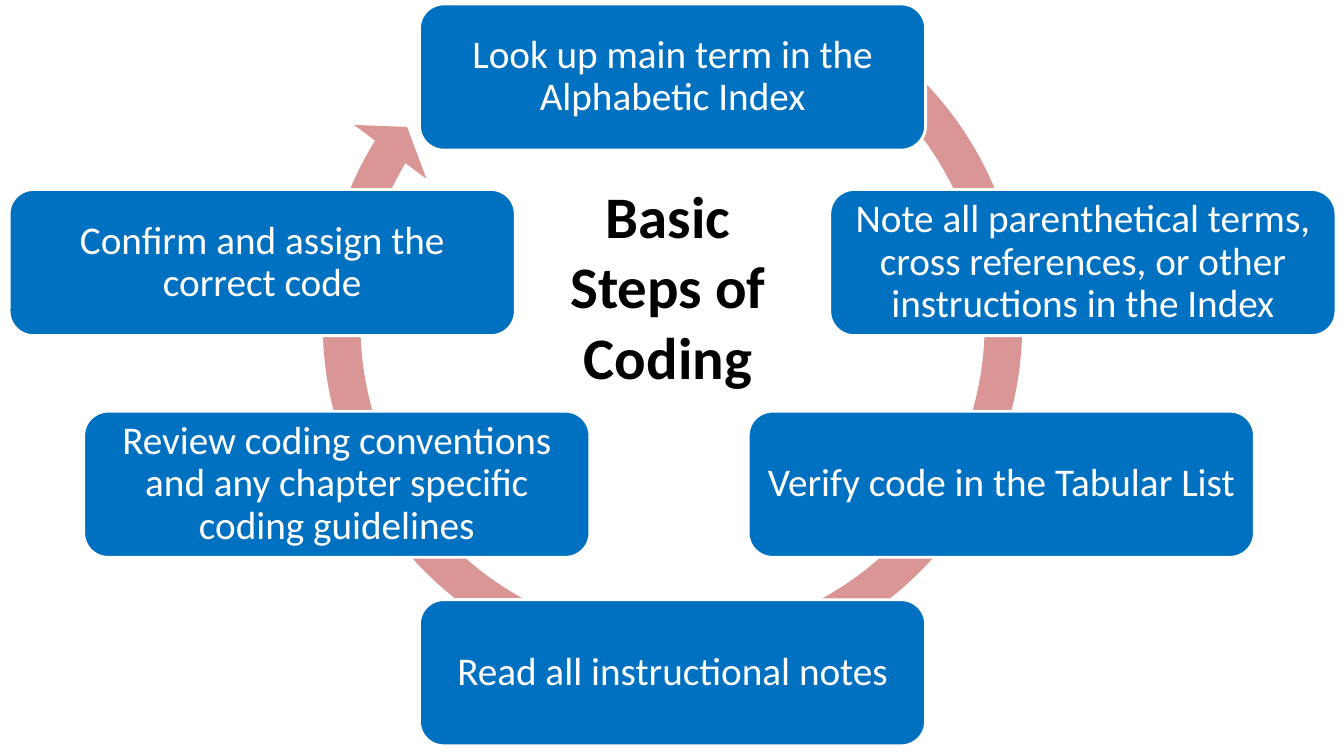
"""Build a slide showing the basic steps of coding as a cycle."""
from pptx import Presentation
from pptx import util as u
from pptx.dml.color import RGBColor
from pptx.enum import shapes, text

W, H = u.Inches(13.33), u.Inches(7.5)
CENTER = 50.04
BOX_W, BOX_H = 37.66, 19.33
TOP, UPPER, LOWER, BOTTOM = 0.53, 25.07, 54.4, 79.33
STEPS = [
    ("Look up main term in the Alphabetic Index", 0, TOP),
    ("Note all parenthetical terms, cross references, or other "
     "instructions in the Index", 30.53, UPPER),
    ("Verify code in the Tabular List", 24.46, LOWER),
    ("Read all instructional notes", 0, BOTTOM),
    ("Review coding conventions and any chapter specific coding guidelines",
     -24.98, LOWER),
    ("Confirm and assign the correct code", -30.53, UPPER),
]


def color(hex_code):
    """Turn a hex string into a color."""
    return RGBColor.from_string(hex_code)


def area(x, y, w, h):
    """Turn percentages of the slide's size into lengths."""
    return [round(share * side / 100)
            for share, side in zip((x, y, w, h), (W, H, W, H))]


def write(s, words, size, hex_code, bold=False, spacing=1.0):
    """Write one centred paragraph into a shape."""
    tf = s.text_frame
    tf.word_wrap = True
    tf.vertical_anchor = text.MSO_ANCHOR.MIDDLE
    p = tf.paragraphs[0]
    p.text = words
    p.alignment = text.PP_ALIGN.CENTER
    p.line_spacing = spacing
    p.font.name = "Calibri"
    p.font.size = u.Pt(size)
    p.font.bold = bold
    p.font.color.rgb = color(hex_code)
    return tf


def add_solid(sp, kind, box, fill):
    """Add a flat preset shape without an outline."""
    s = sp.add_shape(kind, *area(*box))
    s.shadow.inherit = False
    s.fill.solid()
    s.fill.fore_color.rgb = color(fill)
    s.line.fill.background()
    return s


def add_cycle_arrow(sp):
    """Add the circular arrow that joins the steps."""
    s = add_solid(sp, shapes.MSO_SHAPE.CIRCULAR_ARROW,
                  (CENTER - 27.98, -6.8, 55.96, 99.47), "D99694")
    for i, value in enumerate((0.05, 3.13, 126.88, 181.02, 0.06)):
        s.adjustments[i] = value


def add_step(sp, words, offset, top):
    """Add a step box, offset sideways from the cycle's center."""
    s = add_solid(sp, shapes.MSO_SHAPE.ROUNDED_RECTANGLE,
                  (CENTER + offset - BOX_W / 2, top, BOX_W, BOX_H), "0070C0")
    s.line.color.rgb = color("FFFFFF")
    s.line.width = u.Pt(2)
    tf = write(s, words, 28, "FFFFFF", spacing=0.9)
    tf.margin_left = tf.margin_right = u.Inches(0.12)
    tf.margin_top = tf.margin_bottom = u.Inches(0.12)


def main():
    """Build and save the slide."""
    prs = Presentation()
    prs.slide_width, prs.slide_height = W, H
    sp = prs.slides.add_slide(prs.slide_layouts[6]).shapes
    title = sp.add_textbox(*area(41.26, 24.4, 16.88, 26.67))
    write(title, "Basic Steps of Coding", 42, "000000", bold=True)
    add_cycle_arrow(sp)
    for step in STEPS:
        add_step(sp, *step)
    prs.save("out.pptx")


if __name__ == "__main__":
    main()
